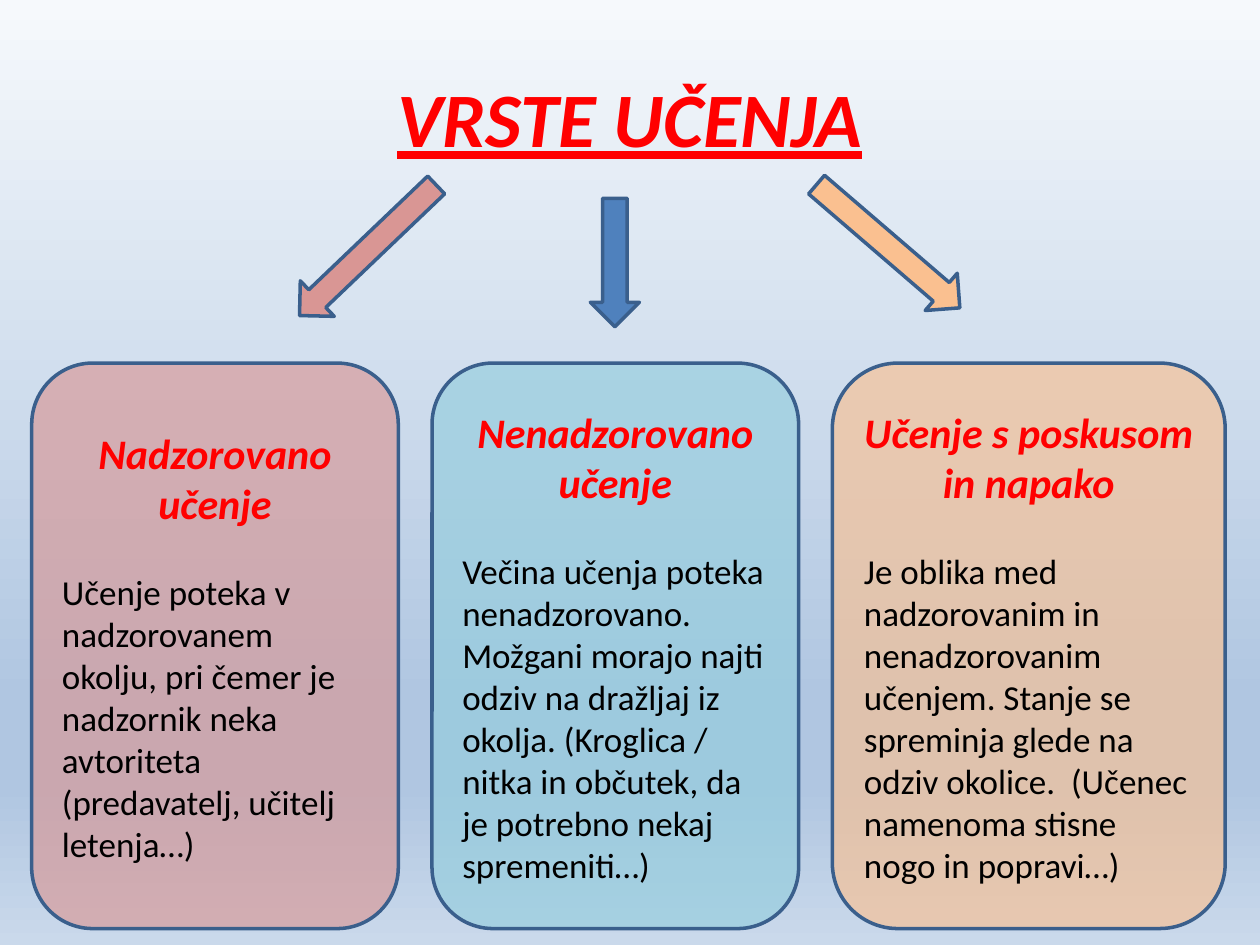
"""Builds a slide on the three kinds of learning."""
from lxml import etree
from pptx import Presentation
from pptx import util as u
from pptx.dml.color import RGBColor
from pptx.enum import shapes, text
from pptx.oxml import parse_xml
from pptx.oxml.ns import nsdecls, qn

COLORS = {
    "red": "FF0000", "black": "000000", "outline": "3A5F8C",
    "rose": "D99694", "aqua": "93CDDD", "peach": "FAC090", "blue": "4F81BD",
}
BACKGROUND = [(0, "F6F9FC"), (74, "B0C6E1"), (83, "B0C6E1"), (100, "CAD9EB")]
TITLE = "VRSTE UČENJA"
CARDS = [
    ("Nadzorovano učenje",
     "Učenje poteka v nadzorovanem okolju, pri čemer je nadzornik neka "
     "avtoriteta (predavatelj, učitelj letenja…)", "rose", 7.39),
    ("Nenadzorovano učenje",
     "Večina učenja poteka nenadzorovano. Možgani morajo najti odziv na "
     "dražljaj iz okolja. (Kroglica / nitka in občutek, da je potrebno nekaj "
     "spremeniti…)", "aqua", 7.39),
    ("Učenje s poskusom in napako",
     "Je oblika med nadzorovanim in nenadzorovanim učenjem. Stanje se "
     "spreminja glede na odziv okolice.  (Učenec namenoma stisne nogo in "
     "popravi…)", "peach", 7.92),
]
ARROWS = [
    (5.51, 4.55, 3.81, 136.3, "rose"),
    (11.1, 4.8, 2.59, 90, "blue"),
    (16, 4.47, 3.81, 40.7, "peach"),
]
CARD_LEFT, CARD_TOP, CARD_HEIGHT, CARD_GAP = 0.64, 7.32, 11.4, 0.68
ARROW_HEIGHT = 0.99
CARD_OPACITY = 64


def rgb(name):
    return RGBColor.from_string(COLORS[name])


def set_background(s):
    s.background.fill.gradient()
    grad = s._element.find(".//" + qn("a:gradFill"))
    stops = "".join(
        f'<a:gs pos="{pos * 1000}"><a:srgbClr val="{color}"/></a:gs>'
        for pos, color in BACKGROUND)
    grad.getparent().replace(grad, parse_xml(
        f'<a:gradFill {nsdecls("a")} rotWithShape="1"><a:gsLst>{stops}</a:gsLst>'
        '<a:lin ang="5400000" scaled="0"/></a:gradFill>'))


def style_text(p, size, color, strong, align):
    p.alignment = align
    f = p.font
    f.name, f.size, f.bold, f.italic = "Calibri", u.Pt(size), strong, strong
    f.color.rgb = rgb(color)


def add_shape(s, kind, box, color):
    sp = s.shapes.add_shape(kind, *(u.Cm(v) for v in box))
    sp.shadow.inherit = False
    sp.fill.solid()
    sp.fill.fore_color.rgb = rgb(color)
    sp.line.color.rgb = rgb("outline")
    sp.line.width = u.Pt(2)
    return sp


def add_card(s, left, heading, body, color, width):
    sp = add_shape(s, shapes.MSO_SHAPE.ROUNDED_RECTANGLE,
                   (left, CARD_TOP, width, CARD_HEIGHT), color)
    fill = sp._element.spPr.find(qn("a:solidFill"))
    etree.SubElement(fill[0], qn("a:alpha"), val=str(CARD_OPACITY * 1000))
    tf = sp.text_frame
    tf.word_wrap = True
    tf.vertical_anchor = text.MSO_ANCHOR.MIDDLE
    tf.text = heading
    style_text(tf.paragraphs[0], 24, "red", True, text.PP_ALIGN.CENTER)
    p = tf.add_paragraph()
    p.text = body
    p.space_before = u.Pt(24)
    style_text(p, 20, "black", False, text.PP_ALIGN.LEFT)


def main():
    prs = Presentation()
    prs.slide_width, prs.slide_height = u.Cm(25.4), u.Cm(19.05)
    s = prs.slides.add_slide(prs.slide_layouts[5])
    set_background(s)

    title = s.shapes.title
    title.left, title.top = u.Cm(1.27), u.Cm(0.76)
    title.width, title.height = u.Cm(22.86), u.Cm(3.18)
    title.text_frame.text = TITLE
    title.text_frame.vertical_anchor = text.MSO_ANCHOR.MIDDLE
    p = title.text_frame.paragraphs[0]
    style_text(p, 44, "red", True, text.PP_ALIGN.CENTER)
    p.font.underline = True

    left = CARD_LEFT
    for heading, body, color, width in CARDS:
        add_card(s, left, heading, body, color, width)
        left += width + CARD_GAP

    for x, y, length, angle, color in ARROWS:
        sp = add_shape(s, shapes.MSO_SHAPE.RIGHT_ARROW,
                       (x, y, length, ARROW_HEIGHT), color)
        sp.rotation = angle

    prs.save("out.pptx")


if __name__ == "__main__":
    main()
